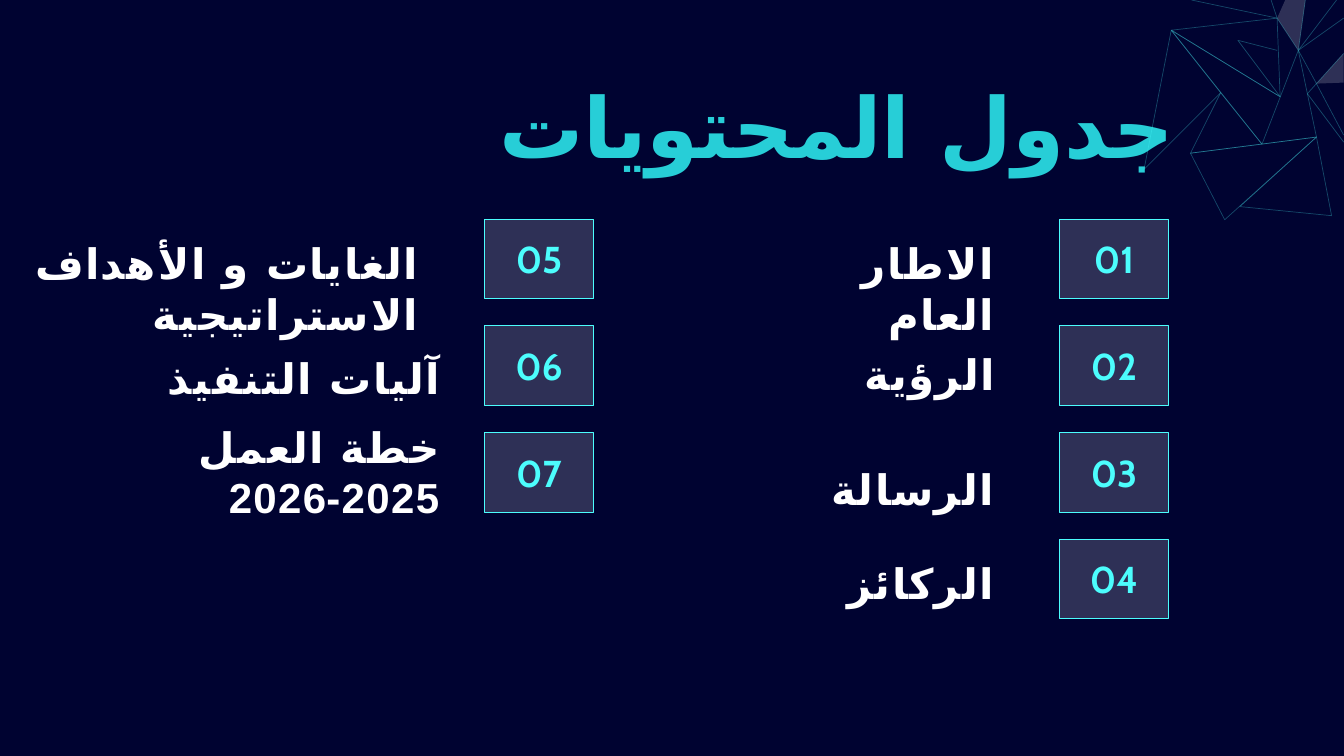
"""Build the Arabic table of contents slide."""
from dataclasses import dataclass

from lxml import etree
from pptx import Presentation
from pptx import util as u
from pptx.dml.color import RGBColor
from pptx.enum import lang, shapes, text
from pptx.oxml import ns

CELL = u.Inches(0.1)
COLUMNS, ROWS = 133.33, 75
NAVY = RGBColor(0x00, 0x03, 0x31)
CYAN = RGBColor(0x4C, 0xFD, 0xFD)
TURQUOISE = RGBColor(0x27, 0xCE, 0xD7)
WHITE = RGBColor(0xFF, 0xFF, 0xFF)
ARABIC_FONT, DIGIT_FONT = "DejaVu Sans", "Arial"
RIGHT_BOX, LEFT_BOX = 105.1, 48.05
BOX_WIDTH, BOX_HEIGHT = 10.85, 7.9
FIRST_ROW, ROW_PITCH = 21.74, 10.58
LINE_HEIGHT, TWO_LINES = 6.1, 11.1


@dataclass(frozen=True)
class Entry:
    """A numbered entry and the cells its label fills."""
    label: str
    box_left: float
    row: int
    left: float
    top: float
    width: float
    height: float = LINE_HEIGHT
    years: str = ""


@dataclass(frozen=True)
class Facet:
    """A piece of the corner mesh, given by its node letters."""
    nodes: str
    closed: bool = True
    filled: bool = False


ENTRIES = (
    Entry("الاطار العام", RIGHT_BOX, 0, 72.4, 23.1, 27.2),
    Entry("الرؤية", RIGHT_BOX, 1, 76.9, 34.1, 22.8),
    Entry("الرسالة", RIGHT_BOX, 2, 72.4, 45.5, 27.2),
    Entry("الركائز", RIGHT_BOX, 3, 72.4, 54.8, 27.2),
    Entry("الغايات و الأهداف الاستراتيجية", LEFT_BOX, 0, 1.2, 23.1, 41.3, TWO_LINES),
    Entry("آليات التنفيذ", LEFT_BOX, 1, 8.3, 34.5, 36.4),
    Entry("خطة العمل ", LEFT_BOX, 2, 12.5, 41.3, 32.2, TWO_LINES, "2025-2026"),
)
NODES = {
    "A": (128.8, 5), "B": (130.6, 13.6), "C": (125.2, 14.3), "D": (130.6, 8.3),
    "E": (129.7, 9.3), "F": (133.3, 14.1), "G": (133.3, 1.8), "H": (116.2, 3),
    "I": (127, 9.6), "J": (126.7, 1.8), "K": (132.6, 0), "L": (129.5, 0),
    "M": (118.2, 0), "N": (126.1, 0), "O": (122.8, 4), "P": (126.7, 5),
    "Q": (121.1, 9.2), "R": (113.5, 16.8), "S": (118.1, 15.2), "T": (121.5, 21.8),
    "U": (123, 20.5), "V": (132.1, 21.4), "W": (133.3, 8.2), "X": (133.3, 5.3),
    "Y": (133.3, 13.4), "Z": (127.5, 0),
}
FACETS = (
    Facet("CBA"), Facet("GADEF", closed=False), Facet("XDY", closed=False),
    Facet("CHIJA", closed=False), Facet("KAL", closed=False),
    Facet("MJN", closed=False), Facet("POIHJ", closed=False), Facet("RQH"),
    Facet("STB"), Facet("SCQ"), Facet("UVB"),
    Facet("JZLA", filled=True), Facet("DWX", filled=True),
)


def cells(*counts: float) -> list[int]:
    """Turn counts of grid cells into lengths."""
    return [round(count * CELL) for count in counts]


def paint(fill, color: RGBColor, opacity: int = 100) -> None:
    """Give a fill a solid colour with an opacity in percent."""
    fill.solid()
    fill.fore_color.rgb = color
    if opacity < 100:
        color_element = fill._xPr.find(".//" + ns.qn("a:srgbClr"))
        etree.SubElement(color_element, ns.qn("a:alpha"), val=str(opacity * 1000))


def set_script_font(font, name: str) -> None:
    """Set the complex-script typeface of a font."""
    etree.SubElement(font._rPr, ns.qn("a:cs"), typeface=name)


def write(shape, words: str, size: float, color: RGBColor, inset: tuple[float, float],
          font_name: str = "Lato", arabic: bool = True, spacing: int = 0):
    """Write one bold paragraph, right to left when Arabic, and return it."""
    frame = shape.text_frame
    frame.word_wrap = True
    frame.margin_left = frame.margin_right = u.Inches(inset[0])
    frame.margin_top = frame.margin_bottom = u.Inches(inset[1])
    paragraph = frame.paragraphs[0]
    paragraph.text = words
    paragraph.alignment = text.PP_ALIGN.RIGHT if arabic else text.PP_ALIGN.CENTER
    font = paragraph.font
    font.name, font.size, font.bold = font_name, u.Pt(size), True
    font.color.rgb = color
    if arabic:
        paragraph._p.get_or_add_pPr().set("rtl", "1")
        set_script_font(font, ARABIC_FONT)
        paragraph.runs[0].font.language_id = lang.MSO_LANGUAGE_ID.ARABIC
    if spacing:
        font._rPr.set("spc", str(spacing))
    return paragraph


def add_facet(mesh, facet: Facet) -> None:
    """Draw a facet as a hairline outline or a pale filled area."""
    points = [cells(*NODES[node]) for node in facet.nodes]
    builder = mesh.shapes.build_freeform(*points[0])
    builder.add_line_segments(points[1:], close=facet.closed)
    shape = builder.convert_to_shape()
    shape.shadow.inherit = False
    if facet.filled:
        paint(shape.fill, WHITE, 18)
        shape.line.fill.background()
    else:
        shape.fill.background()
        shape.line.width = u.Pt(0.5)
        paint(shape.line.fill, CYAN, 28)


def add_entry(slide, number: int, entry: Entry) -> None:
    """Draw the number box of an entry and its label."""
    top = FIRST_ROW + entry.row * ROW_PITCH
    box = slide.shapes.add_shape(shapes.MSO_SHAPE.RECTANGLE,
                                 *cells(entry.box_left, top, BOX_WIDTH, BOX_HEIGHT))
    box.shadow.inherit = False
    paint(box.fill, WHITE, 18)
    box.line.width = u.Pt(0.75)
    paint(box.line.fill, CYAN)
    box.text_frame.vertical_anchor = text.MSO_ANCHOR.MIDDLE
    write(box, f"{number:02d}", 26.7, CYAN, (0.13, 0.13), "Cabin", arabic=False)

    label = slide.shapes.add_textbox(
        *cells(entry.left, entry.top, entry.width, entry.height))
    paragraph = write(label, entry.label, 30, WHITE, (0.1, 0.05), spacing=100)
    if entry.years:
        years = paragraph.add_run()
        years.text = entry.years
        years.font.language_id = lang.MSO_LANGUAGE_ID.ARABIC
        set_script_font(years.font, DIGIT_FONT)
    label.text_frame.auto_size = text.MSO_AUTO_SIZE.SHAPE_TO_FIT_TEXT


def add_title(slide) -> None:
    """Place and format the slide title."""
    title = slide.shapes.title
    title.left, title.top, title.width, title.height = cells(11.2, 6.4, 106.3, 10.8)
    title.text_frame.vertical_anchor = text.MSO_ANCHOR.TOP
    title.text_frame.auto_size = text.MSO_AUTO_SIZE.NONE
    write(title, "جدول المحتويات", 60, TURQUOISE, (0.1, 0.1))


def main() -> None:
    """Build and save the presentation."""
    presentation = Presentation()
    presentation.slide_width, presentation.slide_height = cells(COLUMNS, ROWS)
    slide = presentation.slides.add_slide(presentation.slide_layouts[5])
    paint(slide.background.fill, NAVY)
    mesh = slide.shapes.add_group_shape()
    for facet in FACETS:
        add_facet(mesh, facet)
    add_title(slide)
    for number, entry in enumerate(ENTRIES, start=1):
        add_entry(slide, number, entry)
    presentation.save("out.pptx")


if __name__ == "__main__":
    main()
